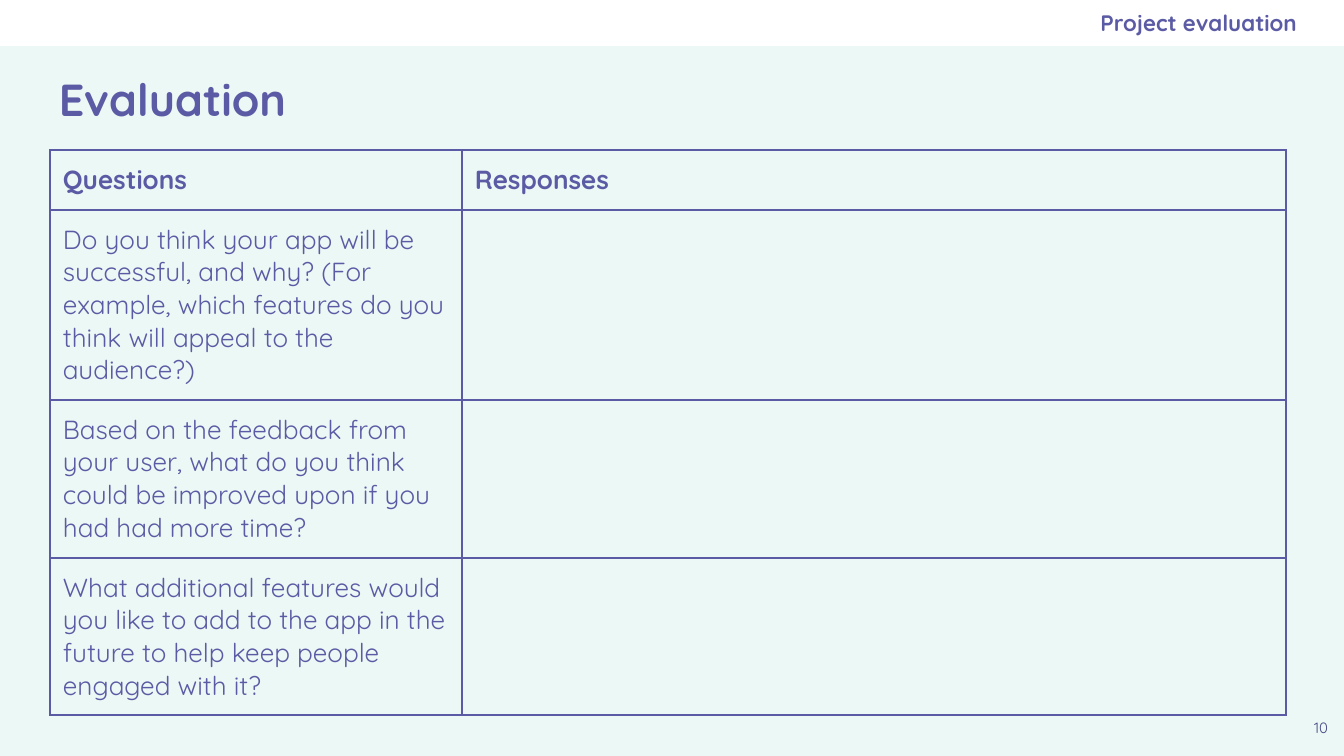
"""Build the project evaluation slide with its question and response table."""
from lxml import etree
from pptx import Presentation
from pptx.dml.color import RGBColor
from pptx.enum.shapes import MSO_SHAPE
from pptx.enum.text import MSO_ANCHOR, PP_ALIGN
from pptx.oxml.ns import qn
from pptx.util import Pt

TITLE = "Evaluation"
SECTION = "Project evaluation"
PAGE = "10"
ROWS = [
    ("Questions", "Responses"),
    ("Do you think your app will be successful, and why? (For example, "
     "which features do you think will appeal to the audience?)", ""),
    ("Based on the feedback from your user, what do you think could be "
     "improved upon if you had had more time?", ""),
    ("What additional features would you like to add to the app in the "
     "future to help keep people engaged with it?", ""),
]
COL_WIDTHS = [412, 824]
ROW_HEIGHTS = [60, 190, 158, 157]
TABLE_LEFT, TABLE_TOP = 50, 150
INSET = 13

FONT = "Quicksand"
PURPLE = RGBColor(0x5B, 0x5B, 0xA5)
DARK_PURPLE = RGBColor(0x49, 0x49, 0x85)
MINT = RGBColor(0xEC, 0xF8, 0xF5)
WHITE = RGBColor(0xFF, 0xFF, 0xFF)
RECT = MSO_SHAPE.RECTANGLE
TOP, MIDDLE = MSO_ANCHOR.TOP, MSO_ANCHOR.MIDDLE
LEFT, CENTER, RIGHT = PP_ALIGN.LEFT, PP_ALIGN.CENTER, PP_ALIGN.RIGHT


def px(n):
    return round(n * 914400 / 134.4)


def write(tf, text, size=14, color=PURPLE, bold=False, align=LEFT):
    p = tf.paragraphs[0]
    p.alignment = align
    r = p.add_run()
    r.text = text
    r.font.name = FONT
    r.font.size = Pt(size)
    r.font.bold = bold
    r.font.color.rgb = color


def add_text(slide, box, text, anchor=MIDDLE, right_inset=INSET, **fmt):
    tf = slide.shapes.add_textbox(*map(px, box)).text_frame
    tf.word_wrap = True
    tf.vertical_anchor = anchor
    tf.margin_left = tf.margin_top = tf.margin_bottom = px(INSET)
    tf.margin_right = px(right_inset)
    write(tf, text, **fmt)


def add_borders(cell):
    tc_pr = cell._tc.get_or_add_tcPr()
    for i, side in enumerate(("lnL", "lnR", "lnT", "lnB")):
        ln = etree.Element(qn(f"a:{side}"), w=str(Pt(1)))
        fill = etree.SubElement(ln, qn("a:solidFill"))
        etree.SubElement(fill, qn("a:srgbClr"), val=str(PURPLE))
        tc_pr.insert(i, ln)


def add_table(slide):
    box = (TABLE_LEFT, TABLE_TOP, sum(COL_WIDTHS), sum(ROW_HEIGHTS))
    table = slide.shapes.add_table(
        len(ROWS), len(COL_WIDTHS), *map(px, box)).table
    table.horz_banding = False
    for col, width in zip(table.columns, COL_WIDTHS):
        col.width = px(width)
    for i, (row, height) in enumerate(zip(table.rows, ROW_HEIGHTS)):
        row.height = px(height)
        for cell, text in zip(row.cells, ROWS[i]):
            cell.margin_left = cell.margin_right = px(INSET)
            cell.margin_top = cell.margin_bottom = px(INSET)
            cell.fill.background()
            add_borders(cell)
            if text:
                write(cell.text_frame, text, bold=i == 0)


def main():
    prs = Presentation()
    prs.slide_width, prs.slide_height = px(1344), px(756)
    slide = prs.slides.add_slide(prs.slide_layouts[6])
    slide.background.fill.solid()
    slide.background.fill.fore_color.rgb = MINT

    band = slide.shapes.add_shape(RECT, 0, 0, px(1344), px(46))
    band.shadow.inherit = False
    band.fill.solid()
    band.fill.fore_color.rgb = WHITE
    band.line.fill.background()

    add_text(slide, (46, 48, 1252, 102), TITLE, size=24, bold=True)
    add_text(slide, (1298, 710, 46, 46), PAGE, anchor=TOP, size=8,
             color=DARK_PURPLE, align=CENTER)
    add_text(slide, (773, 0, 524, 46), SECTION, right_inset=0, size=12,
             bold=True, align=RIGHT)
    add_table(slide)
    prs.save("out.pptx")


if __name__ == "__main__":
    main()
